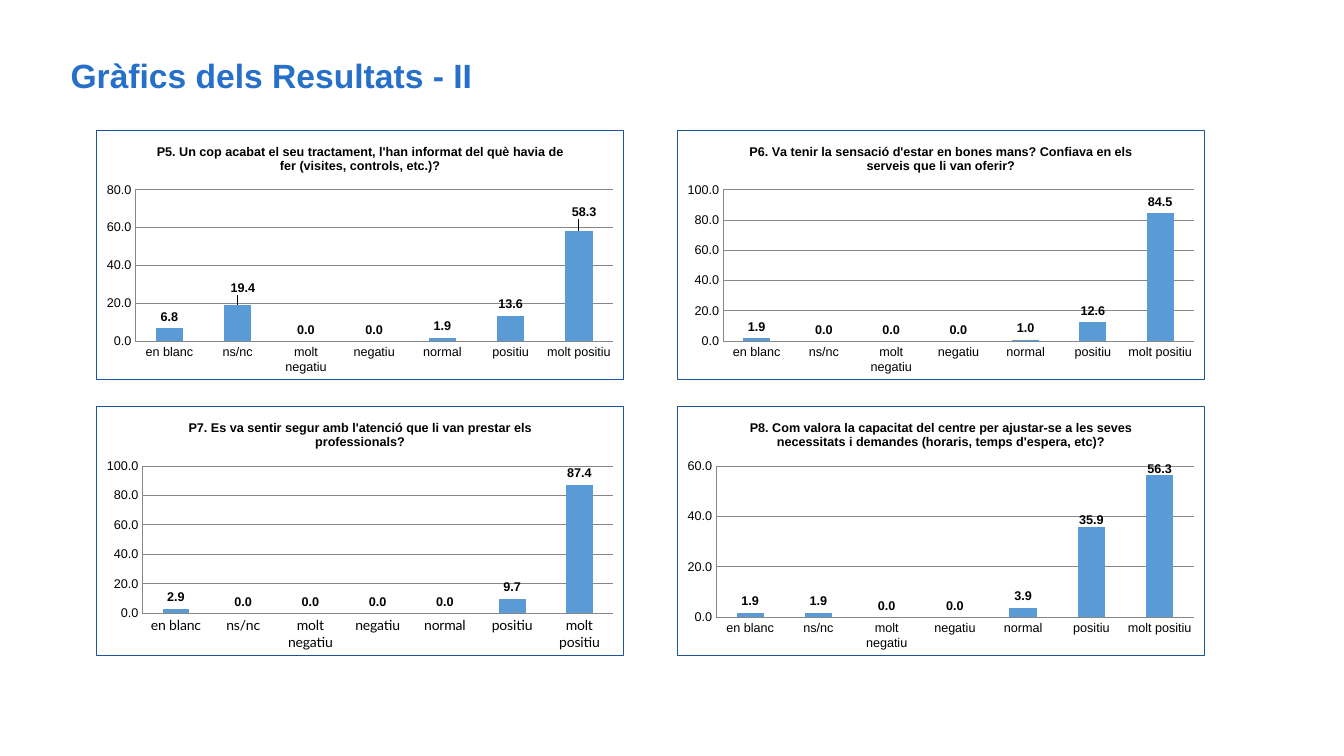
import pptx
import pptx.chart.data
import pptx.dml.color
import pptx.enum.chart
import pptx.enum.text
import pptx.oxml
import pptx.oxml.ns
import pptx.util

Inches, Pt = pptx.util.Inches, pptx.util.Pt
RGB = pptx.dml.color.RGBColor.from_string

# Content
TITLE = "Gràfics dels Resultats - II"
CATEGORIES = ["en blanc", "ns/nc", "molt negatiu", "negatiu", "normal", "positiu", "molt positiu"]
# "nudges" moves a label by point index, as fractions of the chart's width and height
CHARTS = [
    dict(title="P5. Un cop acabat el seu tractament, l'han informat del què havia de fer (visites, controls, etc.)?",
         values=[6.8, 19.4, 0, 0, 1.9, 13.6, 58.3], top_value=80,
         nudges={1: (0.01, -0.02), 6: (0.01, -0.03)}),
    dict(title="P6. Va tenir la sensació d'estar en bones mans? Confiava en els serveis que li van oferir?",
         values=[1.9, 0, 0, 0, 1, 12.6, 84.5], top_value=100),
    dict(title="P7. Es va sentir segur amb l'atenció que li van prestar els professionals?",
         values=[2.9, 0, 0, 0, 0, 9.7, 87.4], top_value=100, category_font=("Lato", 10)),
    dict(title="P8. Com valora la capacitat del centre per ajustar-se a les seves necessitats i demandes "
               "(horaris, temps d'espera, etc)?",
         values=[1.9, 1.9, 0, 0, 3.9, 35.9, 56.3], top_value=60,
         nudges={5: (0, 0.02), 6: (0, 0.02)}),
]

THEME = dict(font="Arial", title="2670CA", text="000000", bar="5B9BD5", grid="878787",
             border="1D5497", title_size=24, chart_size=9)

# Grid of charts
LEFT, TOP = 0.95, 1.29
WIDTH, HEIGHT = 5.24, 2.48
STEP_X, STEP_Y = 5.76, 2.74


def style_font(font, name=THEME["font"], size=THEME["chart_size"], bold=False, color=THEME["text"]):
    font.name, font.size, font.bold = name, Pt(size), bold
    font.color.rgb = RGB(color)


def add_border(chart):
    border = pptx.oxml.parse_xml(
        f'<c:spPr {pptx.oxml.ns.nsdecls("c", "a")}><a:solidFill><a:srgbClr val="FFFFFF"/></a:solidFill>'
        f'<a:ln w="{Pt(0.75)}"><a:solidFill><a:srgbClr val="{THEME["border"]}"/></a:solidFill></a:ln></c:spPr>')
    chart.element.xpath("c:chart")[0].addnext(border)


def nudge_label(chart, series, index, dx, dy):
    label = series.points[index].data_label
    style_font(label.font, bold=True)
    label.position = pptx.enum.chart.XL_LABEL_POSITION.OUTSIDE_END
    layout = pptx.oxml.parse_xml(
        f'<c:layout {pptx.oxml.ns.nsdecls("c")}><c:manualLayout>'
        f'<c:x val="{dx}"/><c:y val="{dy}"/></c:manualLayout></c:layout>')
    chart.element.xpath(f'.//c:dLbl/c:idx[@val="{index}"]')[0].addnext(layout)


def add_bar_chart(slide, left, top, title, values, top_value, nudges=None,
                  category_font=(THEME["font"], THEME["chart_size"])):
    data = pptx.chart.data.CategoryChartData(number_format="0.0")
    data.categories = CATEGORIES
    data.add_series("Series 1", values)
    chart = slide.shapes.add_chart(
        pptx.enum.chart.XL_CHART_TYPE.COLUMN_CLUSTERED,
        Inches(left), Inches(top), Inches(WIDTH), Inches(HEIGHT), data).chart
    style_font(chart.font, "Lato", 10)
    chart.has_legend = False
    add_border(chart)

    # Chart title
    tf = chart.chart_title.text_frame
    tf.text = title
    style_font(tf.paragraphs[0].runs[0].font, bold=True)
    chart.chart_title.include_in_layout = False

    # Axes
    for axis in (chart.category_axis, chart.value_axis):
        axis.major_tick_mark = axis.minor_tick_mark = pptx.enum.chart.XL_TICK_MARK.NONE
        axis.format.line.color.rgb = RGB(THEME["grid"])
        axis.format.line.width = Pt(0.75)
    style_font(chart.category_axis.tick_labels.font, *category_font)
    axis = chart.value_axis
    axis.minimum_scale, axis.maximum_scale, axis.major_unit = 0, top_value, 20
    style_font(axis.tick_labels.font)
    axis.tick_labels.number_format = "0.0"
    axis.tick_labels.number_format_is_linked = False
    axis.major_gridlines.format.line.color.rgb = RGB(THEME["grid"])
    axis.major_gridlines.format.line.width = Pt(0.75)

    # Bars and value labels
    plot = chart.plots[0]
    plot.gap_width, plot.vary_by_categories = 150, False
    series = plot.series[0]
    series.format.fill.solid()
    series.format.fill.fore_color.rgb = RGB(THEME["bar"])
    labels = series.data_labels
    style_font(labels.font, bold=True)
    labels.show_value = True
    labels.number_format, labels.number_format_is_linked = "0.0", False
    labels.position = pptx.enum.chart.XL_LABEL_POSITION.OUTSIDE_END
    for index, (dx, dy) in (nudges or {}).items():
        nudge_label(chart, series, index, dx, dy)


def main():
    prs = pptx.Presentation()
    prs.slide_width, prs.slide_height = Inches(13.33), Inches(7.5)
    slide = prs.slides.add_slide(prs.slide_layouts[5])

    # Slide title
    sp = slide.shapes.title
    sp.left, sp.top, sp.width, sp.height = Inches(0.6), Inches(0.54), Inches(12.19), Inches(0.46)
    tf = sp.text_frame
    tf.text = TITLE
    tf.word_wrap = True
    tf.vertical_anchor = pptx.enum.text.MSO_ANCHOR.MIDDLE
    p = tf.paragraphs[0]
    p.alignment = pptx.enum.text.PP_ALIGN.LEFT
    p.line_spacing = 0.9
    style_font(p.runs[0].font, size=THEME["title_size"], bold=True, color=THEME["title"])

    # Charts, two per row
    for i, content in enumerate(CHARTS):
        row, column = divmod(i, 2)
        add_bar_chart(slide, LEFT + column * STEP_X, TOP + row * STEP_Y, **content)

    prs.save("out.pptx")


if __name__ == "__main__":
    main()
